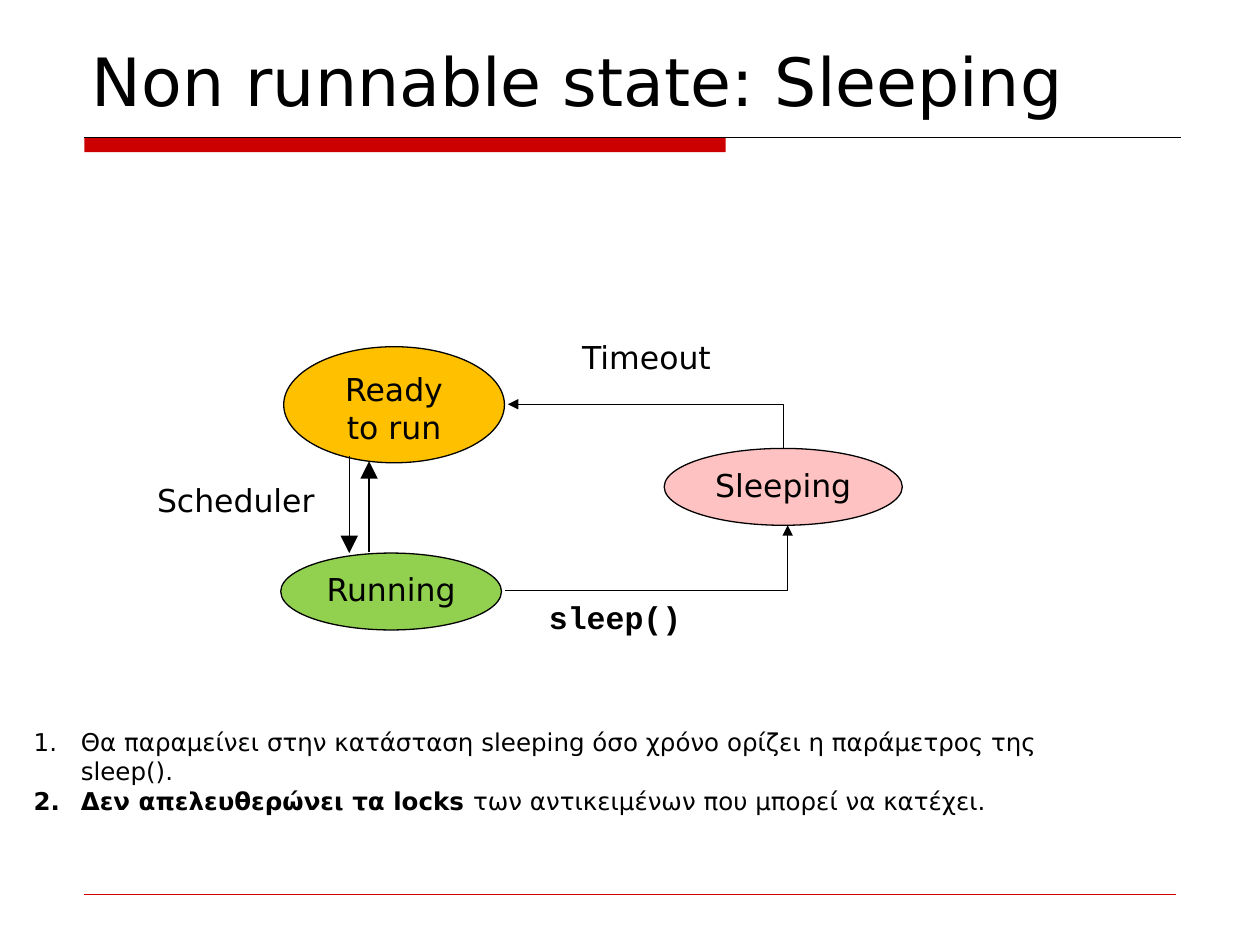
from lxml import etree
from pptx import Presentation
from pptx import util as u
from pptx.dml.color import RGBColor
from pptx.enum import shapes, text
from pptx.oxml.ns import qn

BLACK = RGBColor(0x00, 0x00, 0x00)
RED = RGBColor(0xCC, 0x00, 0x00)
ORANGE = RGBColor(0xFF, 0xC0, 0x00)
GREEN = RGBColor(0x92, 0xD0, 0x50)
PINK = RGBColor(0xFF, 0xC2, 0xC2)
SANS, MONO = "DejaVu Sans", "Courier New"
STRAIGHT, ELBOW = shapes.MSO_CONNECTOR.STRAIGHT, shapes.MSO_CONNECTOR.ELBOW

TITLE = "Non runnable state: Sleeping"
STATES = [
    ("Ready to run", ORANGE, (5.72, 6.99, 4.45, 2.34)),
    ("Running", GREEN, (5.66, 11.15, 4.45, 1.55)),
    ("Sleeping", PINK, (13.39, 9.04, 4.8, 1.55)),
]
LABELS = [
    ("sleep()", MONO, True, (10.8, 11.94, 3.2, 1.02)),
    ("Scheduler", SANS, False, (2.9, 9.58, 3.71, 1.02)),
    ("Timeout", SANS, False, (11.46, 6.68, 3.15, 1.02)),
]
ARROWS = [
    (STRAIGHT, (7.44, 11.13, 7.44, 9.3), "tailEnd", "lg"),
    (STRAIGHT, (7.04, 9.19, 7.04, 11.15), "tailEnd", "lg"),
    (ELBOW, (10.19, 11.91, 15.88, 10.59), "tailEnd", "med"),
    (ELBOW, (10.24, 8.15, 15.8, 9.04), "headEnd", "med"),
]
NOTES = [
    [("Θα παραμείνει στην κατάσταση sleeping όσο χρόνο ορίζει η παράμετρος της sleep().", False)],
    [("Δεν απελευθερώνει τα locks ", True),
     ("των αντικειμένων που μπορεί να κατέχει.", False)],
]


def cm(values):
    return [u.Cm(value) for value in values]


def style(span, size, font=SANS, bold=False):
    span.font.name, span.font.size, span.font.bold = font, u.Pt(size), bold
    span.font.color.rgb = BLACK


def write(box, words, size, font=SANS, bold=False, align=text.PP_ALIGN.CENTER):
    box.text_frame.text = words
    para = box.text_frame.paragraphs[0]
    para.alignment = align
    style(para.runs[0], size, font, bold)


def add_line(page, kind, ends, color=BLACK, width=0.75):
    line = page.shapes.add_connector(kind, *cm(ends))
    line.line.color.rgb = color
    line.line.width = u.Pt(width)
    etree.SubElement(line.element.spPr, qn("a:effectLst"))
    return line


def add_frame(page):
    page.shapes.title.left, page.shapes.title.top = cm((1.6, 0.2))
    page.shapes.title.width, page.shapes.title.height = cm((22.23, 2.34))
    write(page.shapes.title, TITLE, 38, align=text.PP_ALIGN.LEFT)
    frame = page.shapes.title.text_frame
    frame.auto_size = text.MSO_AUTO_SIZE.NONE
    frame.vertical_anchor = text.MSO_ANCHOR.BOTTOM

    bar = page.shapes.add_shape(shapes.MSO_SHAPE.RECTANGLE, *cm((1.7, 2.77, 12.93, 0.3)))
    bar.shadow.inherit = False
    bar.fill.solid()
    bar.fill.fore_color.rgb = RED
    bar.line.fill.background()
    add_line(page, STRAIGHT, (1.7, 2.77, 23.8, 2.77), width=0.5)
    add_line(page, STRAIGHT, (1.7, 18.03, 23.7, 18.03), RED, 0.25)


def add_state(page, words, color, place):
    state = page.shapes.add_shape(shapes.MSO_SHAPE.OVAL, *cm(place))
    state.shadow.inherit = False
    state.fill.solid()
    state.fill.fore_color.rgb = color
    state.line.color.rgb = BLACK
    state.line.width = u.Pt(0.75)
    write(state, words, 18)
    state.text_frame.vertical_anchor = text.MSO_ANCHOR.TOP


def add_label(page, words, font, bold, place):
    label = page.shapes.add_textbox(*cm(place))
    label.text_frame.word_wrap = False
    write(label, words, 18, font, bold)


def add_arrow(page, kind, ends, tip, size):
    arrow = add_line(page, kind, ends)
    if kind == ELBOW:
        arrow.element.spPr.find(qn("a:prstGeom")).set("prst", "bentConnector2")
    etree.SubElement(arrow.line._get_or_add_ln(), qn("a:" + tip),
                     type="triangle", w=size, len=size)


def add_notes(page):
    box = page.shapes.add_textbox(*cm((0.43, 14.53, 22.48, 2)))
    frame = box.text_frame
    frame.word_wrap = True
    for index, pieces in enumerate(NOTES):
        para = frame.add_paragraph() if index else frame.paragraphs[0]
        for words, bold in pieces:
            span = para.add_run()
            span.text = words
            style(span, 14, bold=bold)
        props = para._p.get_or_add_pPr()
        props.set("marL", str(u.Cm(0.95)))
        props.set("indent", str(-u.Cm(0.95)))
        etree.SubElement(props, qn("a:buFont"), typeface=SANS)
        etree.SubElement(props, qn("a:buAutoNum"), type="arabicPeriod")


def main():
    deck = Presentation()
    deck.slide_width, deck.slide_height = cm((25.4, 19.05))
    page = deck.slides.add_slide(deck.slide_layouts[5])
    add_frame(page)
    for state in STATES:
        add_state(page, *state)
    for label in LABELS:
        add_label(page, *label)
    for arrow in ARROWS:
        add_arrow(page, *arrow)
    add_notes(page)
    deck.save("out.pptx")


if __name__ == "__main__":
    main()
